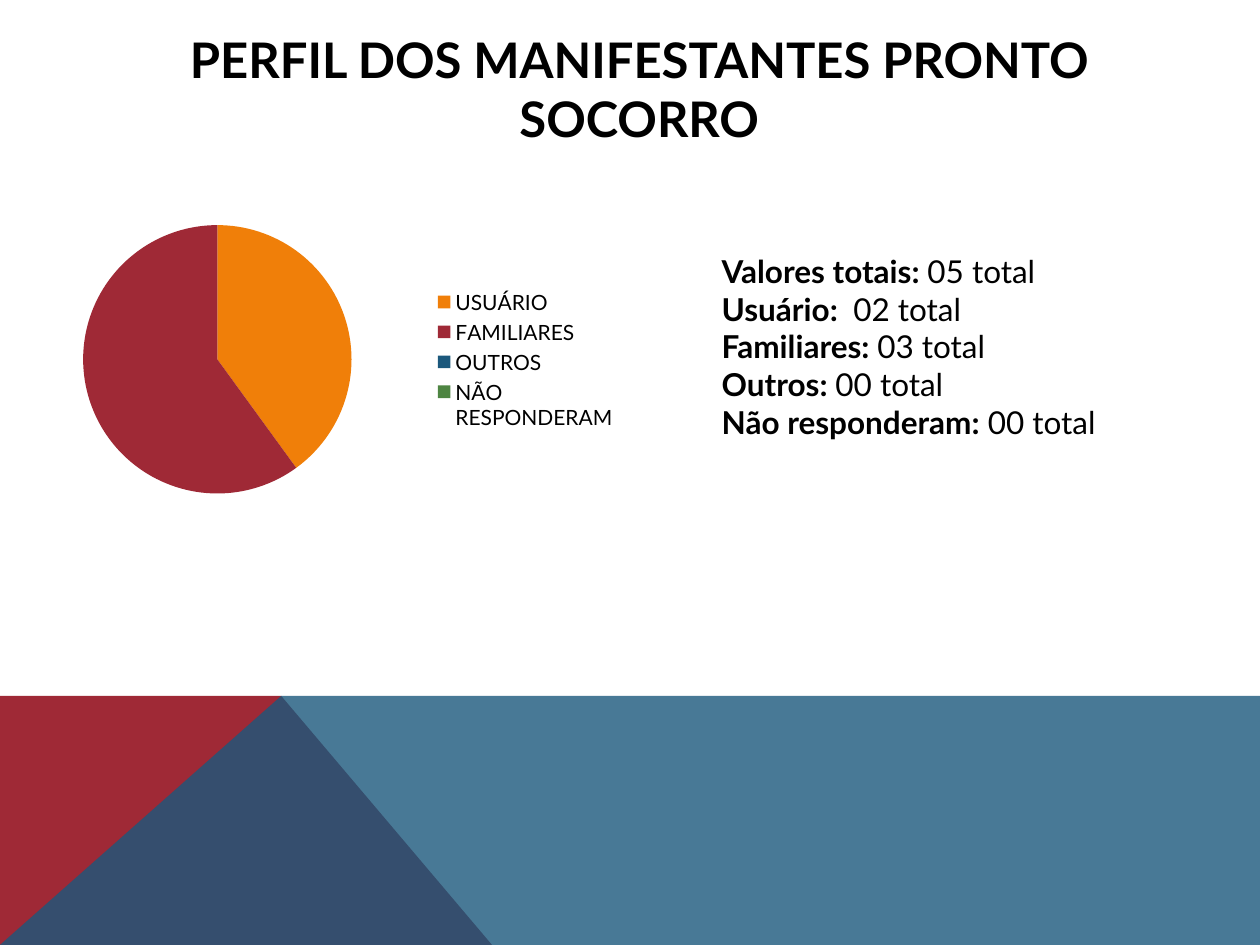
import pptx
import pptx.chart.data
import pptx.dml.color
import pptx.enum.chart
import pptx.enum.text
import pptx.oxml
import pptx.oxml.ns
import pptx.util
from pptx.util import Cm

FONT = "Lato"
BLACK, RED, BLUE = "000000", "9F2936", "1B587C"
SLIDE_W, SLIDE_H = 25.4, 19.05
BAND_TOP, PEAK_X, FOOT_X = 14.03, 5.67, 9.92

TOTALS = [
    ("Valores totais: ", "05 total"),
    ("Usuário:  ", "02 total"),
    ("Familiares: ", "03 total"),
    ("Outros: ", "00 total"),
    ("Não responderam:", " 00 total"),
]
SHARES = [
    ("USUÁRIO", 40, "F07F09"),
    ("FAMILIARES", 60, RED),
    ("OUTROS", 0, BLUE),
    ("NÃO RESPONDERAM", 0, "4E8542"),
]


def rgb(value):
    return pptx.dml.color.RGBColor.from_string(value)


def set_font(font, size, bold=False):
    font.name = FONT
    font.size = pptx.util.Pt(size)
    font.bold = bold
    font.color.rgb = rgb(BLACK)


def add_run(p, text, size, bold=False):
    r = p.add_run()
    r.text = text
    set_font(r.font, size, bold)


def add_polygon(slide, points, color, opacity=100):
    corners = [(Cm(x), Cm(y)) for x, y in points]
    builder = slide.shapes.build_freeform(*corners[0])
    builder.add_line_segments(corners[1:], close=True)
    sp = builder.convert_to_shape()
    sp.shadow.inherit = False
    sp.fill.solid()
    sp.fill.fore_color.rgb = rgb(color)
    sp.line.fill.background()
    if opacity < 100:
        clr = sp._element.spPr.find(".//" + pptx.oxml.ns.qn("a:srgbClr"))
        alpha = pptx.oxml.parse_xml(
            f'<a:alpha {pptx.oxml.ns.nsdecls("a")} val="{opacity * 1000}"/>')
        clr.append(alpha)


def set_title(slide, text):
    sp = slide.shapes.title
    sp.left, sp.top, sp.width, sp.height = Cm(1.57), Cm(1.02), Cm(22.63), Cm(1.52)
    tf = sp.text_frame
    tf.word_wrap = True
    tf.auto_size = pptx.enum.text.MSO_AUTO_SIZE.NONE
    tf.vertical_anchor = pptx.enum.text.MSO_ANCHOR.MIDDLE
    p = tf.paragraphs[0]
    p.alignment = pptx.enum.text.PP_ALIGN.CENTER
    add_run(p, text, 28, bold=True)


def add_totals(slide, rows):
    sp = slide.shapes.add_textbox(Cm(14.3), Cm(4.95), Cm(8.94), Cm(4.11))
    tf = sp.text_frame
    tf.word_wrap = True
    tf.auto_size = pptx.enum.text.MSO_AUTO_SIZE.SHAPE_TO_FIT_TEXT
    for i, (label, value) in enumerate(rows):
        p = tf.add_paragraph() if i else tf.paragraphs[0]
        add_run(p, label, 18, bold=True)
        add_run(p, value, 18)


def place_plot(chart, x, y, w, h):
    """Fix the plot area, in fractions of the chart."""
    area = chart._chartSpace.chart.plotArea
    for old in area.findall(pptx.oxml.ns.qn("c:layout")):
        area.remove(old)
    sizes = "".join(f'<c:{tag} val="{value}"/>'
                    for tag, value in zip("xywh", (x, y, w, h)))
    area.insert(0, pptx.oxml.parse_xml(
        f'<c:layout {pptx.oxml.ns.nsdecls("c")}><c:manualLayout>'
        '<c:layoutTarget val="inner"/><c:xMode val="edge"/><c:yMode val="edge"/>'
        f'{sizes}</c:manualLayout></c:layout>'))


def add_pie(slide, shares):
    data = pptx.chart.data.CategoryChartData()
    data.categories = [name for name, _, _ in shares]
    data.add_series("Series 1", [value for _, value, _ in shares])
    chart = slide.shapes.add_chart(
        pptx.enum.chart.XL_CHART_TYPE.PIE,
        Cm(0), Cm(4.17), Cm(12.7), Cm(6.15), data).chart
    set_font(chart.font, 18)
    chart.has_title = False
    chart.has_legend = True
    chart.legend.position = pptx.enum.chart.XL_LEGEND_POSITION.RIGHT
    chart.legend.include_in_layout = True
    set_font(chart.legend.font, 12)
    # Keep the pie clear of the legend
    place_plot(chart, 0.13, 0.06, 0.43, 0.88)
    plot = chart.plots[0]
    plot.vary_by_categories = True
    for i, (_, _, color) in enumerate(shares):
        fill = plot.series[0].points[i].format.fill
        fill.solid()
        fill.fore_color.rgb = rgb(color)


def main():
    prs = pptx.Presentation()
    prs.slide_width, prs.slide_height = Cm(SLIDE_W), Cm(SLIDE_H)
    slide = prs.slides.add_slide(prs.slide_layouts[5])

    # Bottom band: the translucent blue overlaps the red
    peak = (PEAK_X, BAND_TOP)
    add_polygon(slide, [(0, SLIDE_H), (0, BAND_TOP), peak, (FOOT_X, SLIDE_H)], RED)
    add_polygon(slide, [(0, SLIDE_H), peak, (SLIDE_W, BAND_TOP), (SLIDE_W, SLIDE_H)],
                BLUE, opacity=80)

    # Title, totals and chart
    set_title(slide, "PERFIL DOS MANIFESTANTES PRONTO SOCORRO")
    add_totals(slide, TOTALS)
    add_pie(slide, SHARES)

    prs.save("out.pptx")


if __name__ == "__main__":
    main()
